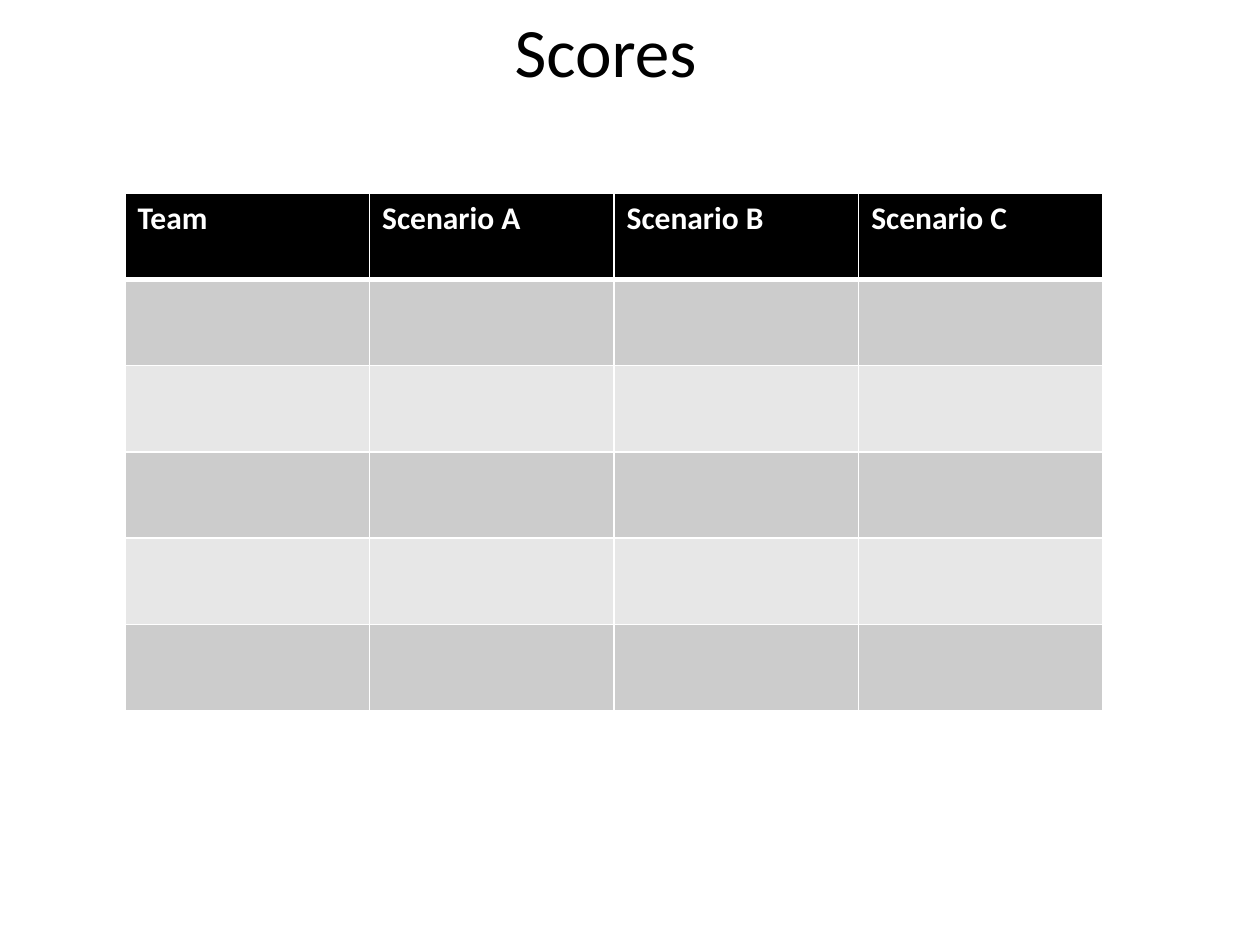
import pptx
import pptx.dml.color
import pptx.enum.text
import pptx.oxml.ns
import pptx.util
from lxml import etree
from pptx.dml.color import RGBColor
from pptx.util import Cm

# Content
TITLE = "Scores "  # the trailing space shifts the centred word slightly left
HEADINGS = ["Team", "Scenario A", "Scenario B", "Scenario C"]
TEAM_ROWS = 5

# Format
FONT = "Calibri"
BLACK = RGBColor(0x00, 0x00, 0x00)
WHITE = RGBColor(0xFF, 0xFF, 0xFF)
BANDS = [RGBColor(0xCC, 0xCC, 0xCC), RGBColor(0xE7, 0xE7, 0xE7)]
COLUMN_WIDTH, ROW_HEIGHT = Cm(4.93), Cm(1.74)
THIN, THICK = 1, 3


def write(frame, text, size, color, bold=False, align=None):
    paragraph = frame.paragraphs[0]
    paragraph.alignment = align
    run = paragraph.add_run()
    run.text = text
    run.font.name = FONT
    run.font.size = pptx.util.Pt(size)
    run.font.bold = bold
    run.font.color.rgb = color


def set_borders(cell, top, bottom):
    properties = cell._tc.get_or_add_tcPr()
    widths = {"a:lnL": THIN, "a:lnR": THIN, "a:lnT": top, "a:lnB": bottom}
    for tag, width in widths.items():
        line = etree.SubElement(properties, pptx.oxml.ns.qn(tag),
                                w=str(pptx.util.Pt(width)))
        fill = etree.SubElement(line, pptx.oxml.ns.qn("a:solidFill"))
        etree.SubElement(fill, pptx.oxml.ns.qn("a:srgbClr"), val=str(WHITE))


def main():
    deck = pptx.Presentation()
    deck.slide_width, deck.slide_height = Cm(25.4), Cm(19.05)
    slide = deck.slides.add_slide(deck.slide_layouts.get_by_name("Title Only"))

    # Title
    title = slide.shapes.title
    title.left, title.top = Cm(1.57), Cm(0.13)
    title.width, title.height = Cm(21.59), Cm(1.75)
    title.text_frame.vertical_anchor = pptx.enum.text.MSO_ANCHOR.MIDDLE
    write(title.text_frame, TITLE, size=39.6, color=BLACK,
          align=pptx.enum.text.PP_ALIGN.CENTER)

    # Score table: a heading row, then one banded row per team
    row_count = TEAM_ROWS + 1
    scores = slide.shapes.add_table(
        row_count, len(HEADINGS), Cm(2.52), Cm(3.89),
        COLUMN_WIDTH * len(HEADINGS), ROW_HEIGHT * row_count).table
    for column in scores.columns:
        column.width = COLUMN_WIDTH
    for index, row in enumerate(scores.rows):
        row.height = ROW_HEIGHT
        for cell in row.cells:
            set_borders(cell, top=THICK if index == 1 else THIN,
                        bottom=THICK if index == 0 else THIN)
            cell.fill.solid()
            cell.fill.fore_color.rgb = BANDS[(index - 1) % 2] if index else BLACK
    for cell, heading in zip(scores.rows[0].cells, HEADINGS):
        write(cell.text_frame, heading, size=18, color=WHITE, bold=True)

    deck.save("out.pptx")


if __name__ == "__main__":
    main()
